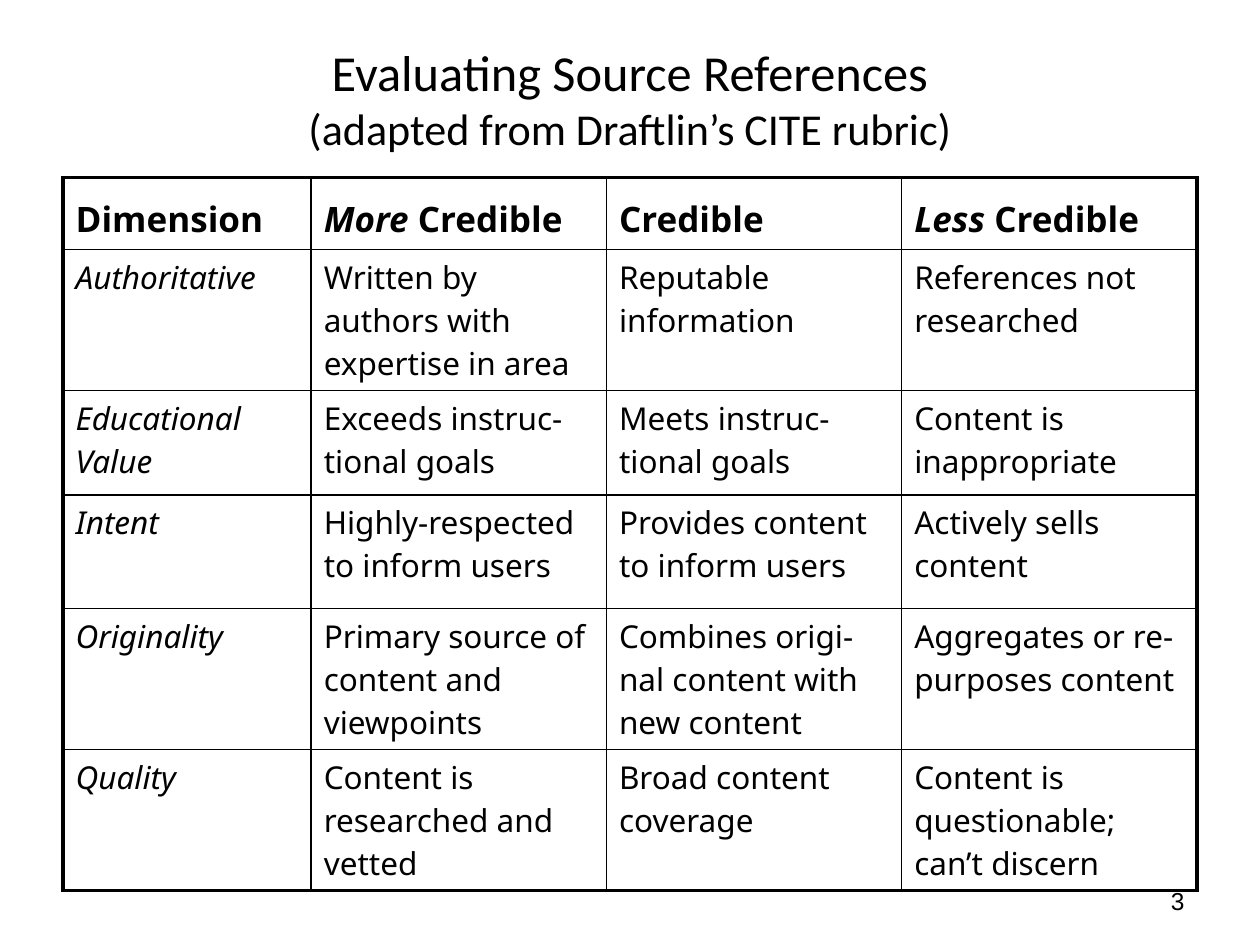
from dataclasses import dataclass

from lxml import etree
from pptx import Presentation
from pptx.dml.color import RGBColor
from pptx.enum.text import MSO_ANCHOR, MSO_AUTO_SIZE, PP_ALIGN
from pptx.oxml.ns import qn
from pptx.util import Inches, Pt

TOP, MIDDLE, BOTTOM = MSO_ANCHOR.TOP, MSO_ANCHOR.MIDDLE, MSO_ANCHOR.BOTTOM
CENTER, RIGHT = PP_ALIGN.CENTER, PP_ALIGN.RIGHT
NO_AUTOFIT = MSO_AUTO_SIZE.NONE

COLORS = {"ink": "000000"}
MARGIN, CONTENT_WIDTH = 0.5, 9
TABLE_TOP = 1.41
DIMENSION_WIDTH = 1.97
THREE_LINES = 1.12
ROW_HEIGHTS = (0.57, THREE_LINES, 0.83, 0.9, THREE_LINES, THREE_LINES)
OUTER_LINE, INNER_LINE = 2.25, 1


@dataclass
class Span:
    text: str
    italic: bool = False


@dataclass
class Criterion:
    dimension: str
    more: str
    credible: str
    less: str

    def cells(self) -> list[list[Span]]:
        levels = (self.more, self.credible, self.less)
        return [[Span(self.dimension, True)]] + [[Span(level)] for level in levels]


HEADER = [
    [Span("Dimension")],
    [Span("More", True), Span(" Credible")],
    [Span("Credible")],
    [Span("Less ", True), Span("Credible")],
]
CRITERIA = [
    Criterion("Authoritative", "Written by authors with expertise in area",
              "Reputable information", "References not researched"),
    Criterion("Educational Value", "Exceeds instruc-tional goals",
              "Meets instruc-tional goals", "Content is inappropriate"),
    Criterion("Intent", "Highly-respected to inform users",
              "Provides content to inform users", "Actively sells content"),
    Criterion("Originality", "Primary source of content and viewpoints",
              "Combines origi-nal content with new content",
              "Aggregates or re-purposes content"),
    Criterion("Quality", "Content is researched and vetted",
              "Broad content coverage", "Content is questionable; can’t discern"),
]


def style_font(font, name: str, size: float, bold: bool = False, italic: bool = False) -> None:
    font.name, font.size, font.bold, font.italic = name, Pt(size), bold, italic
    font.color.rgb = RGBColor.from_string(COLORS["ink"])


def add_border(cell, side: str, width: float) -> None:
    properties = cell._tc.get_or_add_tcPr()
    line = etree.SubElement(properties, qn(f"a:ln{side}"), w=str(Pt(width)))
    fill = etree.SubElement(line, qn("a:solidFill"))
    etree.SubElement(fill, qn("a:srgbClr"), val=COLORS["ink"])


def set_space_before(para, percent: int) -> None:
    spacing = etree.SubElement(para._p.get_or_add_pPr(), qn("a:spcBef"))
    etree.SubElement(spacing, qn("a:spcPct"), val=str(percent * 1000))


def fill_cell(cell, spans: list[Span], is_header: bool) -> None:
    cell.vertical_anchor = BOTTOM if is_header else TOP
    para = cell.text_frame.paragraphs[0]
    set_space_before(para, 20)
    for span in spans:
        run = para.add_run()
        run.text = span.text
        style_font(run.font, "Noto Sans", 20 if is_header else 18, is_header, span.italic)


def add_title(page) -> None:
    title = page.shapes.title
    title.left, title.top = Inches(MARGIN), Inches(0.3)
    title.width, title.height = Inches(CONTENT_WIDTH), Inches(0.95)
    frame = title.text_frame
    frame.text = "Evaluating Source References\v(adapted from Draftlin’s CITE rubric)"
    frame.auto_size = NO_AUTOFIT
    frame.vertical_anchor = MIDDLE
    para = frame.paragraphs[0]
    para.alignment = CENTER
    for run, size in zip(para.runs, (28.8, 25.2)):
        style_font(run.font, "Calibri", size)


def add_rubric(page) -> None:
    rows = [HEADER] + [criterion.cells() for criterion in CRITERIA]
    last_row, last_column = len(rows) - 1, len(HEADER) - 1
    table = page.shapes.add_table(
        len(rows), len(HEADER), Inches(MARGIN), Inches(TABLE_TOP),
        Inches(CONTENT_WIDTH), Inches(sum(ROW_HEIGHTS))).table
    table.horz_banding = False
    level_width = (CONTENT_WIDTH - DIMENSION_WIDTH) / last_column
    for index, column in enumerate(table.columns):
        column.width = Inches(level_width if index else DIMENSION_WIDTH)
    for row, height in zip(table.rows, ROW_HEIGHTS):
        row.height = Inches(height)
    for row_index, row in enumerate(rows):
        for column_index, spans in enumerate(row):
            cell = table.cell(row_index, column_index)
            fill_cell(cell, spans, row_index == 0)
            edges = {"L": column_index == 0, "R": column_index == last_column,
                     "T": row_index == 0, "B": row_index == last_row}
            for side, is_outer in edges.items():
                add_border(cell, side, OUTER_LINE if is_outer else INNER_LINE)
            cell.fill.background()


def add_page_number(page) -> None:
    box = page.shapes.add_textbox(Inches(7.17), Inches(6.95), Inches(2.33), Inches(0.4))
    frame = box.text_frame
    frame.word_wrap = True
    frame.vertical_anchor = MIDDLE
    frame.text = "3"
    para = frame.paragraphs[0]
    para.alignment = RIGHT
    style_font(para.runs[0].font, "Arial", 14)


def main() -> None:
    deck = Presentation()
    deck.slide_width, deck.slide_height = Inches(10), Inches(7.5)
    page = deck.slides.add_slide(deck.slide_layouts[5])
    add_page_number(page)
    add_title(page)
    add_rubric(page)
    deck.save("out.pptx")


if __name__ == "__main__":
    main()
